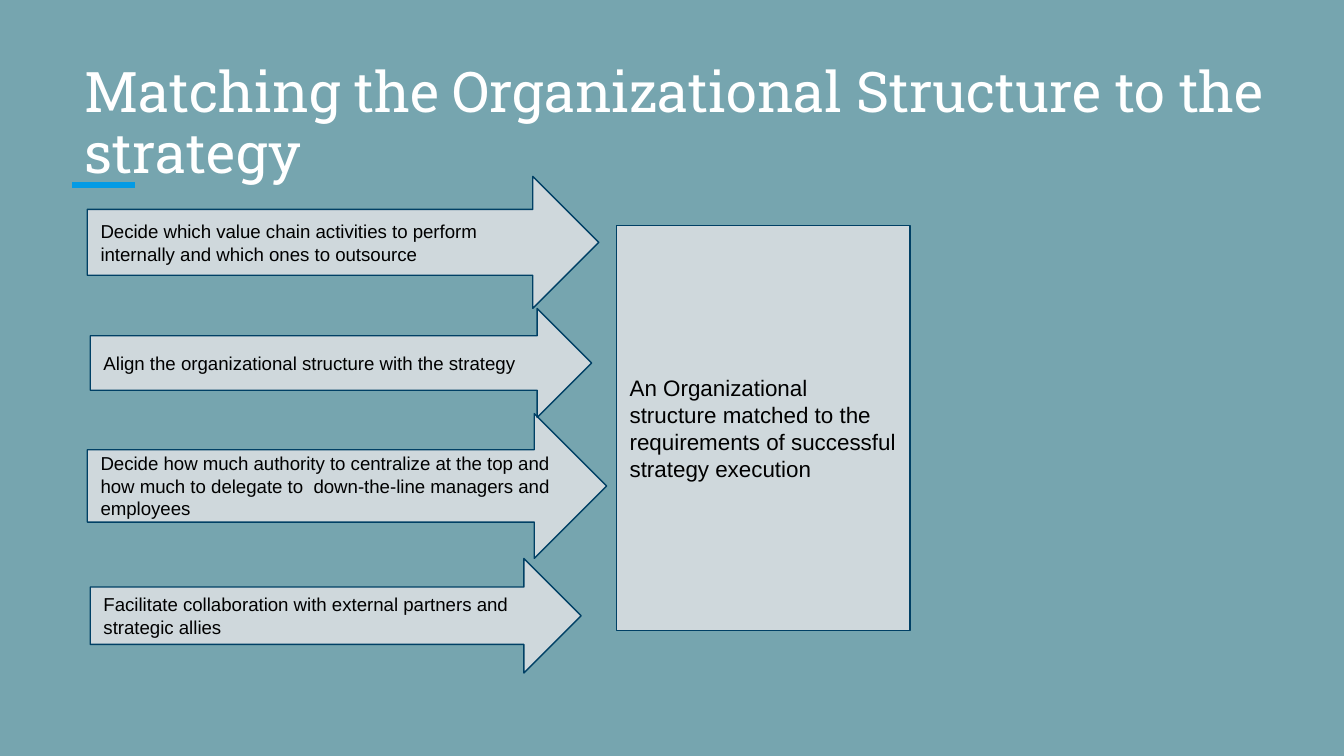
from pptx import Presentation, util as u
from pptx.dml.color import RGBColor
from pptx.enum import shapes, text
from pptx.oxml.ns import qn
from lxml import etree

Pt = u.Pt
colors = {"ground": "76A5AF", "accent": "039BE5", "panel": "CFD8DC",
          "edge": "004065", "title": "FFFFFF", "body": "000000"}
rgb = {name: RGBColor.from_string(value) for name, value in colors.items()}


def write(holder, words, size, font, color, anchor):
    frame = holder.text_frame
    frame.text = words
    frame_format = {"word_wrap": True, "vertical_anchor": anchor,
                    "auto_size": text.MSO_AUTO_SIZE.NONE,
                    "margin_left": Pt(7.2), "margin_right": Pt(7.2),
                    "margin_top": Pt(7.2), "margin_bottom": Pt(7.2)}
    for name, value in frame_format.items():
        setattr(frame, name, value)
    paragraph = frame.paragraphs[0]
    paragraph.alignment = text.PP_ALIGN.LEFT
    run_font = paragraph.runs[0].font
    for name, value in {"size": Pt(size), "name": font}.items():
        setattr(run_font, name, value)
    run_font.color.rgb = rgb[color]
    return paragraph


def add_panel(kind, box, words, size):
    panel = slide.shapes.add_shape(kind, *map(Pt, box))
    panel.shadow.inherit = False
    panel.fill.solid()
    panel.fill.fore_color.rgb = rgb["panel"]
    panel.line.color.rgb = rgb["edge"]
    panel.line.width = Pt(0.75)
    write(panel, words, size, "Arial", "body", text.MSO_ANCHOR.MIDDLE)


deck = Presentation()
deck.slide_width, deck.slide_height = Pt(720), Pt(405)
slide = deck.slides.add_slide(deck.slide_layouts[5])
slide.background.fill.solid()
slide.background.fill.fore_color.rgb = rgb["ground"]

accent = slide.shapes.add_connector(
    shapes.MSO_CONNECTOR.STRAIGHT, Pt(38.7), Pt(99), Pt(72.3), Pt(99))
accent.line.color.rgb = rgb["accent"]
accent.line.width = Pt(3)
etree.SubElement(accent._element.spPr, qn("a:effectLst"))

title = slide.shapes.title
title_box = {"left": 38.2, "top": 36, "width": 658.8, "height": 70.6}
for side, length in title_box.items():
    setattr(title, side, Pt(length))
heading = write(title, "Matching the Organizational Structure to the strategy",
                30, "Roboto Slab", "title", text.MSO_ANCHOR.BOTTOM)
heading.line_spacing = 0.9

decisions = [
    ((46.8, 94.5, 274, 70.7),
     "Decide which value chain activities to perform internally and which ones to outsource"),
    ((46.8, 221.6, 278.2, 77.5),
     "Decide how much authority to centralize at the top and how much to delegate to  "
     "down-the-line managers and employees"),
    ((48.4, 299.2, 263, 61.4),
     "Facilitate collaboration with external partners and strategic allies"),
    ((48.4, 165.3, 268.6, 58.4),
     "Align the organizational structure with the strategy"),
]
for box, words in decisions:
    add_panel(shapes.MSO_SHAPE.RIGHT_ARROW, box, words, 10)

add_panel(shapes.MSO_SHAPE.RECTANGLE, (330.2, 120.8, 157.4, 217),
          "An Organizational structure matched to the requirements of successful strategy execution", 12)

deck.save("out.pptx")
